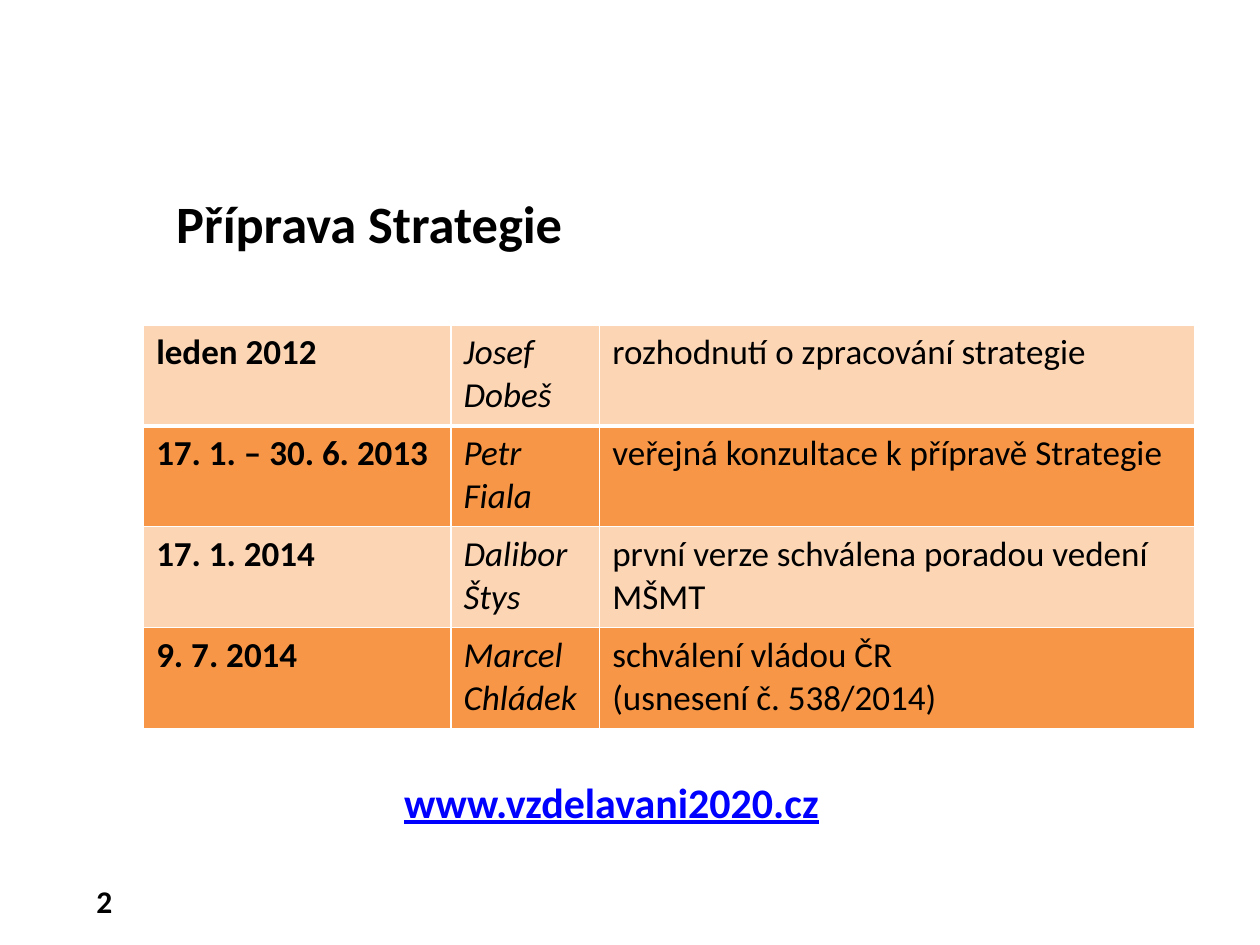
from lxml import etree
from pptx import Presentation
from pptx import util as u
from pptx.dml.color import RGBColor
from pptx.enum import text
from pptx.oxml.ns import qn

HUES = {"ink": "000000", "link": "0000FF", "pale": "FCD5B5",
        "deep": "F79646", "edge": "FFFFFF"}
FONT = "Calibri"


def put(frame, words, size=20, bold=False, slant=False, under=False,
        hue="ink", align=text.PP_ALIGN.LEFT):
    for i, line in enumerate(words.split("\n")):
        para = frame.add_paragraph() if i else frame.paragraphs[0]
        para.text = line
        para.alignment = align
        for run in para.runs:
            font = run.font
            font.name = FONT
            font.size = u.Pt(size)
            font.bold = bold
            font.italic = slant
            font.underline = under
            font.color.rgb = RGBColor.from_string(HUES[hue])


def edge(cell, side, width):
    props = cell._tc.get_or_add_tcPr()
    line = etree.SubElement(props, qn(f"a:ln{side}"), w=str(u.Pt(width)))
    fill = etree.SubElement(line, qn("a:solidFill"))
    etree.SubElement(fill, qn("a:srgbClr"), val=HUES["edge"])


class Deck:
    def __init__(self, wide, high):
        self.show = Presentation()
        self.show.slide_width = u.Inches(wide)
        self.show.slide_height = u.Inches(high)
        self.slide = self.show.slides.add_slide(self.show.slide_layouts[6])

    def label(self, box, words, wrap=True, anchor=text.MSO_ANCHOR.TOP, **style):
        frame = self.slide.shapes.add_textbox(*map(u.Inches, box)).text_frame
        frame.word_wrap = wrap
        frame.vertical_anchor = anchor
        put(frame, words, **style)

    def table(self, box, rows, cols, looks, bands):
        grid = self.slide.shapes.add_table(
            len(rows), len(cols), *map(u.Inches, box)).table
        for col, wide in zip(grid.columns, cols):
            col.width = u.Inches(wide)
        for r, row in enumerate(rows):
            for c, words in enumerate(row):
                cell = grid.cell(r, c)
                put(cell.text_frame, words, **looks[c])
                widths = {"L": 1, "R": 1, "T": 3 if r == 1 else 1,
                          "B": 3 if r == 0 else 1}
                for side, width in widths.items():
                    edge(cell, side, width)
                cell.fill.solid()
                hue = HUES[bands[r % len(bands)]]
                cell.fill.fore_color.rgb = RGBColor.from_string(hue)


def main():
    deck = Deck(10, 7.5)
    deck.label((0.28, 6.95, 0.71, 0.4), "2", size=18, bold=True,
               anchor=text.MSO_ANCHOR.MIDDLE, align=text.PP_ALIGN.RIGHT)
    rows = [
        ("leden 2012", "Josef Dobeš", "rozhodnutí o zpracování strategie"),
        ("17. 1. – 30. 6. 2013", "Petr\nFiala",
         "veřejná konzultace k přípravě Strategie"),
        ("17. 1. 2014", "Dalibor\nŠtys",
         "první verze schválena poradou vedení MŠMT"),
        ("9. 7. 2014", "Marcel Chládek",
         "schválení vládou ČR\v(usnesení č. 538/2014)"),
    ]
    looks = [{"bold": True}, {"slant": True}, {}]
    deck.table((1.14, 2.58, 8.34, 3.2), rows, (2.44, 1.18, 4.72),
               looks, ("pale", "deep"))
    deck.label((1.3, 1.47, 3.29, 1.11), "Příprava Strategie",
               wrap=False, size=30, bold=True)
    deck.label((3.11, 6.11, 4.25, 0.5), "www.vzdelavani2020.cz",
               size=24, bold=True, under=True, hue="link")
    deck.show.save("out.pptx")


if __name__ == "__main__":
    main()
